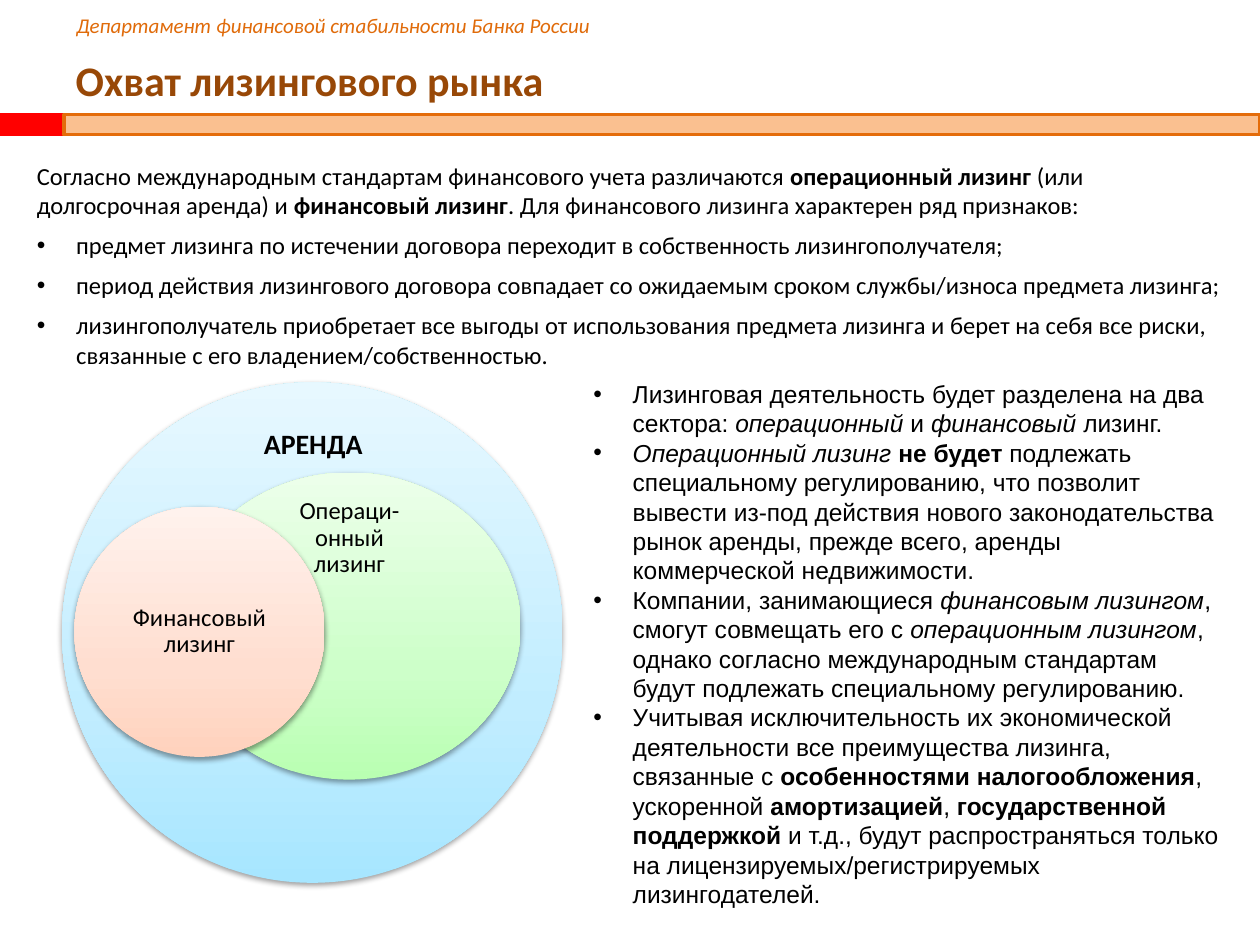
from lxml.etree import SubElement
from pptx import Presentation
from pptx.dml.color import RGBColor
from pptx.enum.shapes import MSO_SHAPE
from pptx.enum.text import MSO_ANCHOR, MSO_AUTO_SIZE, PP_ALIGN
from pptx.oxml.ns import qn
from pptx.util import Pt

BLACK = RGBColor(0x00, 0x00, 0x00)
RED = RGBColor(0xFF, 0x00, 0x00)
ORANGE = RGBColor(0xE4, 0x6C, 0x0A)
HEADER_ORANGE = RGBColor(0xE0, 0x6B, 0x0A)
PEACH = RGBColor(0xFA, 0xC0, 0x90)
BROWN = RGBColor(0x98, 0x48, 0x07)
BLUES = [RGBColor(0xA7, 0xE6, 0xFF), RGBColor(0xC1, 0xED, 0xFF), RGBColor(0xE7, 0xF8, 0xFF)]
GREENS = [RGBColor(0xB9, 0xFF, 0xB2), RGBColor(0xCD, 0xFF, 0xC9), RGBColor(0xEC, 0xFF, 0xEA)]
CORALS = [RGBColor(0xFF, 0xD2, 0xBD), RGBColor(0xFF, 0xDE, 0xD0), RGBColor(0xFF, 0xF2, 0xED)]
GRADIENT_POSITIONS = (0, 35, 100)
BULLET_INDENT = Pt(22.5)


def bold(text):
    return text, {"bold": True}


def italic(text):
    return text, {"italic": True}


INTRO = [[
    "Согласно международным стандартам финансового учета различаются ",
    bold("операционный лизинг "), "(или долгосрочная аренда) и ", bold("финансовый лизинг"),
    ". Для финансового лизинга характерен ряд признаков:",
]]
FEATURES = [
    ["предмет лизинга по истечении договора переходит в собственность лизингополучателя;"],
    ["период действия лизингового договора совпадает со ожидаемым сроком службы/износа "
     "предмета лизинга;"],
    ["лизингополучатель приобретает все выгоды от использования предмета лизинга и берет "
     "на себя все риски, связанные с его владением/собственностью."],
]
CONCLUSIONS = [
    ["Лизинговая деятельность будет разделена на два сектора: ", italic("операционный "),
     "и ", italic("финансовый "), "лизинг."],
    [italic("Операционный лизинг "), bold("не будет "),
     "подлежать специальному регулированию, что позволит вывести из-под действия нового "
     "законодательства рынок аренды, прежде всего, аренды коммерческой недвижимости."],
    ["Компании, занимающиеся ", italic("финансовым лизингом"), ", смогут совмещать его с ",
     italic("операционным лизингом"),
     ", однако согласно международным стандартам будут подлежать специальному регулированию."],
    ["Учитывая исключительность их экономической деятельности все преимущества лизинга, "
     "связанные с ", bold("особенностями налогообложения"), ", ускоренной ",
     bold("амортизацией"), ", ", bold("государственной поддержкой "),
     "и т.д., будут распространяться только на лицензируемых/регистрируемых лизингодателей."],
]


def add_bullet(paragraph):
    properties = paragraph._p.get_or_add_pPr()
    properties.set("marL", str(BULLET_INDENT))
    properties.set("indent", str(-BULLET_INDENT))
    SubElement(properties, qn("a:buFont"), typeface="Arial")
    SubElement(properties, qn("a:buChar"), char="•")


def write_text(frame, paragraphs, *, size, font="Calibri", color=BLACK, bold=False, italic=False,
               align=PP_ALIGN.LEFT, line_spacing=None, space_before=0, bullets_from=None):
    """Fill a frame with paragraphs, each a list of plain strings or (text, style) runs."""
    frame.word_wrap = True
    for index, runs in enumerate(paragraphs):
        paragraph = frame.paragraphs[0] if index == 0 else frame.add_paragraph()
        if bullets_from is not None and index >= bullets_from:
            add_bullet(paragraph)
        paragraph.alignment = align
        if line_spacing:
            paragraph.line_spacing = line_spacing
        if index and space_before:
            paragraph.space_before = Pt(space_before)
        for item in runs:
            text, style = (item, {}) if isinstance(item, str) else item
            run = paragraph.add_run()
            run.text = text
            run.font.name = font
            run.font.size = Pt(size)
            run.font.color.rgb = color
            run.font.bold = style.get("bold", bold)
            run.font.italic = style.get("italic", italic)


def add_text(slide, left, top, width, height, paragraphs, **text_format):
    box = slide.shapes.add_textbox(Pt(left), Pt(top), Pt(width), Pt(height))
    write_text(box.text_frame, paragraphs, **text_format)
    return box


def add_label(slide, left, top, width, height, text, **text_format):
    """Add a centred caption inside the diagram."""
    box = add_text(slide, left, top, width, height, [[text]],
                   align=PP_ALIGN.CENTER, line_spacing=0.9, **text_format)
    frame = box.text_frame
    frame.vertical_anchor = MSO_ANCHOR.MIDDLE
    frame.margin_left = frame.margin_right = Pt(8)
    frame.margin_top = frame.margin_bottom = 0


def add_bar(slide, left, width, fill, line):
    bar = slide.shapes.add_shape(MSO_SHAPE.RECTANGLE, Pt(left), Pt(65.5), Pt(width), Pt(11.5))
    bar.shadow.inherit = False
    bar.fill.solid()
    bar.fill.fore_color.rgb = fill
    bar.line.color.rgb = line
    bar.line.width = Pt(2)


def set_gradient(shape, colors):
    """Fill from the first colour at the bottom to the last at the top."""
    shape.fill.gradient()
    gradient = shape._element.spPr.find(qn("a:gradFill"))
    stops = gradient.find(qn("a:gsLst"))
    for stop in list(stops):
        stops.remove(stop)
    for position, color in zip(GRADIENT_POSITIONS, colors):
        stop = SubElement(stops, qn("a:gs"), pos=str(position * 1000))
        SubElement(stop, qn("a:srgbClr"), val=str(color))
    gradient.find(qn("a:lin")).set("ang", str(270 * 60000))


def add_shadow(shape):
    shape.shadow.inherit = False
    effects = shape._element.spPr.find(qn("a:effectLst"))
    shadow = SubElement(effects, qn("a:outerShdw"), blurRad=str(Pt(3.1)), dist=str(Pt(1.6)),
                        dir=str(90 * 60000), rotWithShape="0")
    color = SubElement(shadow, qn("a:srgbClr"), val=str(BLACK))
    SubElement(color, qn("a:alpha"), val="38000")


def add_ellipse(slide, left, top, width, height, colors):
    ellipse = slide.shapes.add_shape(MSO_SHAPE.OVAL, Pt(left), Pt(top), Pt(width), Pt(height))
    set_gradient(ellipse, colors)
    ellipse.line.fill.background()
    add_shadow(ellipse)


def set_title(slide, text):
    title = slide.shapes.title
    title.left, title.top, title.width, title.height = Pt(36), Pt(26), Pt(608), Pt(39.5)
    title.text_frame.auto_size = MSO_AUTO_SIZE.NONE
    title.text_frame.vertical_anchor = MSO_ANCHOR.MIDDLE
    write_text(title.text_frame, [[text]], size=24, color=BROWN, bold=True)


def add_leasing_diagram(slide):
    add_ellipse(slide, 35.5, 218.5, 286, 286, BLUES)
    add_label(slide, 129, 233, 100, 43, "АРЕНДА", size=16, bold=True)
    add_ellipse(slide, 101.5, 270, 196, 175.5, GREENS)
    add_label(slide, 154, 281, 91.5, 53, "Операци-онный лизинг", size=14)
    add_ellipse(slide, 42.5, 289.5, 143, 143, CORALS)
    add_label(slide, 63.5, 325.5, 101, 71, "Финансовый лизинг", size=14)


def main():
    presentation = Presentation()
    presentation.slide_width, presentation.slide_height = Pt(720), Pt(540)
    slide = presentation.slides.add_slide(presentation.slide_layouts[5])
    add_text(slide, 36.5, 3.5, 470, 22, [["Департамент финансовой стабильности Банка России"]],
             size=12, color=HEADER_ORANGE, italic=True)
    add_bar(slide, 0, 36.5, RED, RED)
    add_bar(slide, 36.5, 683.5, PEACH, ORANGE)
    set_title(slide, "Охват лизингового рынка")
    add_text(slide, 14, 88.5, 692, 136, INTRO + FEATURES,
             size=14, space_before=6, bullets_from=len(INTRO))
    add_leasing_diagram(slide)
    add_text(slide, 332, 213, 374.5, 312.5, CONCLUSIONS,
             size=14, font="Arial", line_spacing=Pt(16.8), bullets_from=0)
    presentation.save("out.pptx")


if __name__ == "__main__":
    main()
